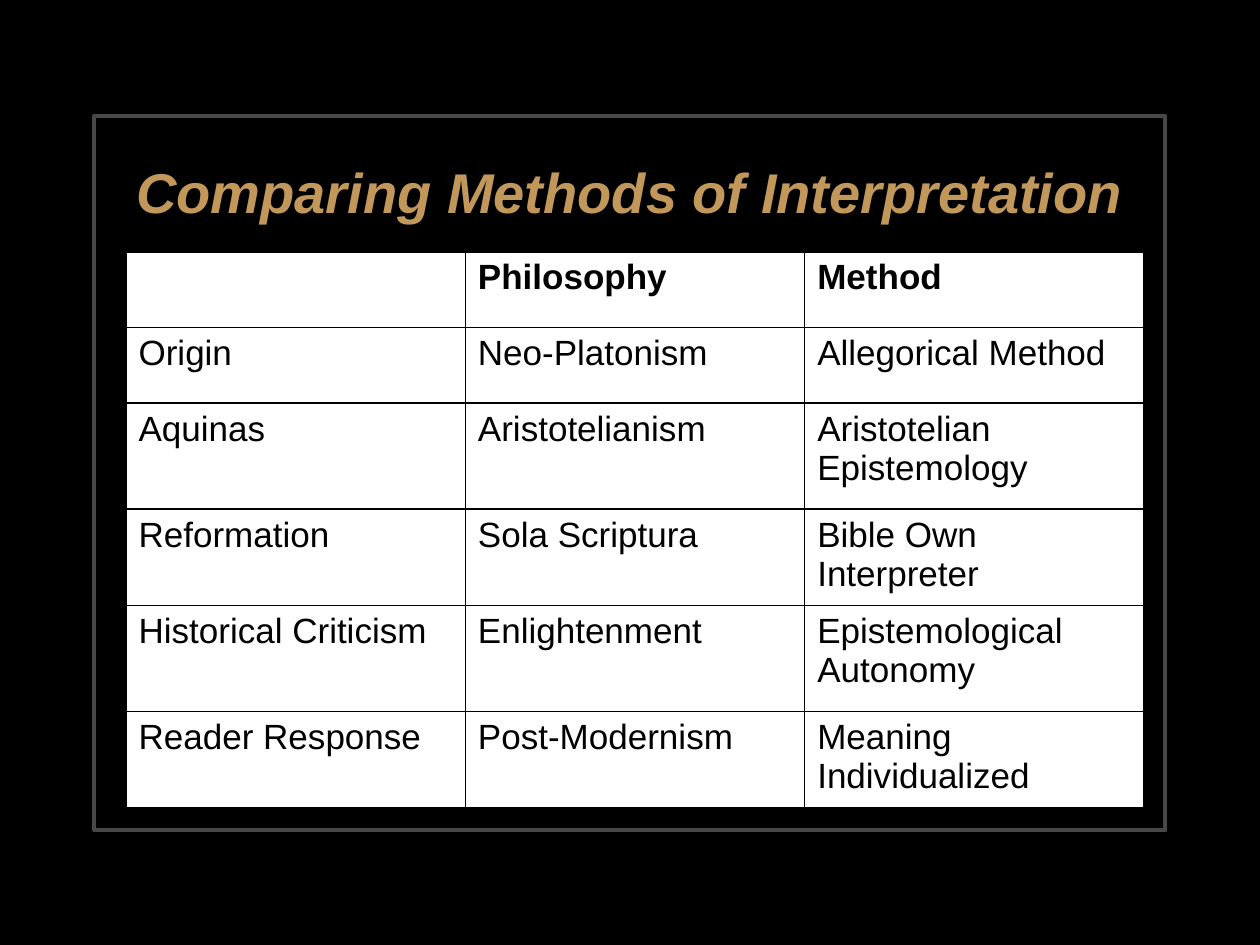
import pptx
import pptx.dml.color
import pptx.enum.shapes
import pptx.enum.text
import pptx.oxml
import pptx.oxml.ns
import pptx.util
from pptx.util import Inches

ROWS = [
    ("", "Philosophy", "Method"),
    ("Origin", "Neo-Platonism", "Allegorical Method"),
    ("Aquinas", "Aristotelianism", "Aristotelian Epistemology"),
    ("Reformation", "Sola Scriptura", "Bible Own Interpreter"),
    ("Historical Criticism", "Enlightenment", "Epistemological Autonomy"),
    ("Reader Response", "Post-Modernism", "Meaning Individualized"),
]
ROW_HEIGHTS = [0.6, 0.6, 0.84, 0.6, 0.84, 0.6]
TITLE_FONT = {"name": "Arial", "size": pptx.util.Pt(32), "bold": True, "italic": True}
CELL_FONT = {"name": "Arial", "size": pptx.util.Pt(20)}
HEADER_FONT = {**CELL_FONT, "bold": True}


def rgb(color):
    return pptx.dml.color.RGBColor.from_string(color)


def set_fill(fill, color):
    fill.solid()
    fill.fore_color.rgb = rgb(color)


def add_run(p, text, font, color):
    r = p.add_run()
    r.text = text
    for name, value in font.items():
        setattr(r.font, name, value)
    r.font.color.rgb = rgb(color)


def add_borders(cell, color="000000", width=pptx.util.Pt(1)):
    tcPr = cell._tc.get_or_add_tcPr()
    for i, side in enumerate("LRTB"):
        tcPr.insert(i, pptx.oxml.parse_xml(
            f'<a:ln{side} {pptx.oxml.ns.nsdecls("a")} w="{width}"><a:solidFill>'
            f'<a:srgbClr val="{color}"/></a:solidFill></a:ln{side}>'))


def add_frame(s, x, y, w, h):
    sp = s.shapes.add_shape(pptx.enum.shapes.MSO_SHAPE.RECTANGLE,
                            Inches(x), Inches(y), Inches(w), Inches(h))
    sp.shadow.inherit = False
    sp.fill.background()
    sp.line.color.rgb = rgb("474747")
    sp.line.width = pptx.util.Pt(2.25)


def add_title(s, x, y, w, h):
    tf = s.shapes.add_textbox(Inches(x), Inches(y), Inches(w), Inches(h)).text_frame
    margins = {f"margin_{side}": Inches(0.1) for side in ("left", "top", "right", "bottom")}
    layout = {"word_wrap": True, "vertical_anchor": pptx.enum.text.MSO_ANCHOR.MIDDLE}
    for name, value in {**margins, **layout}.items():
        setattr(tf, name, value)
    p = tf.paragraphs[0]
    p.alignment = pptx.enum.text.PP_ALIGN.CENTER
    add_run(p, "Comparing Methods of Interpretation", TITLE_FONT, "C19859")


def add_methods_table(s, x, y, w):
    table = s.shapes.add_table(len(ROWS), len(ROWS[0]), Inches(x), Inches(y),
                               Inches(w), Inches(sum(ROW_HEIGHTS))).table
    for row, height in zip(table.rows, ROW_HEIGHTS):
        row.height = Inches(height)
    for i, texts in enumerate(ROWS):
        for j, text in enumerate(texts):
            cell = table.cell(i, j)
            set_fill(cell.fill, "FFFFFF")
            add_borders(cell)
            if text:
                add_run(cell.text_frame.paragraphs[0], text,
                        CELL_FONT if i else HEADER_FONT, "000000")


def main():
    prs = pptx.Presentation()
    prs.slide_width, prs.slide_height = Inches(10), Inches(7.5)
    s = prs.slides.add_slide(prs.slide_layouts[6])
    set_fill(s.background.fill, "000000")

    # Frame, title and comparison table
    add_frame(s, 0.75, 0.92, 8.5, 5.67)
    add_title(s, 0.75, 0.91, 8.5, 1.22)
    add_methods_table(s, 1, 2, 8.08)
    prs.save("out.pptx")


if __name__ == "__main__":
    main()
